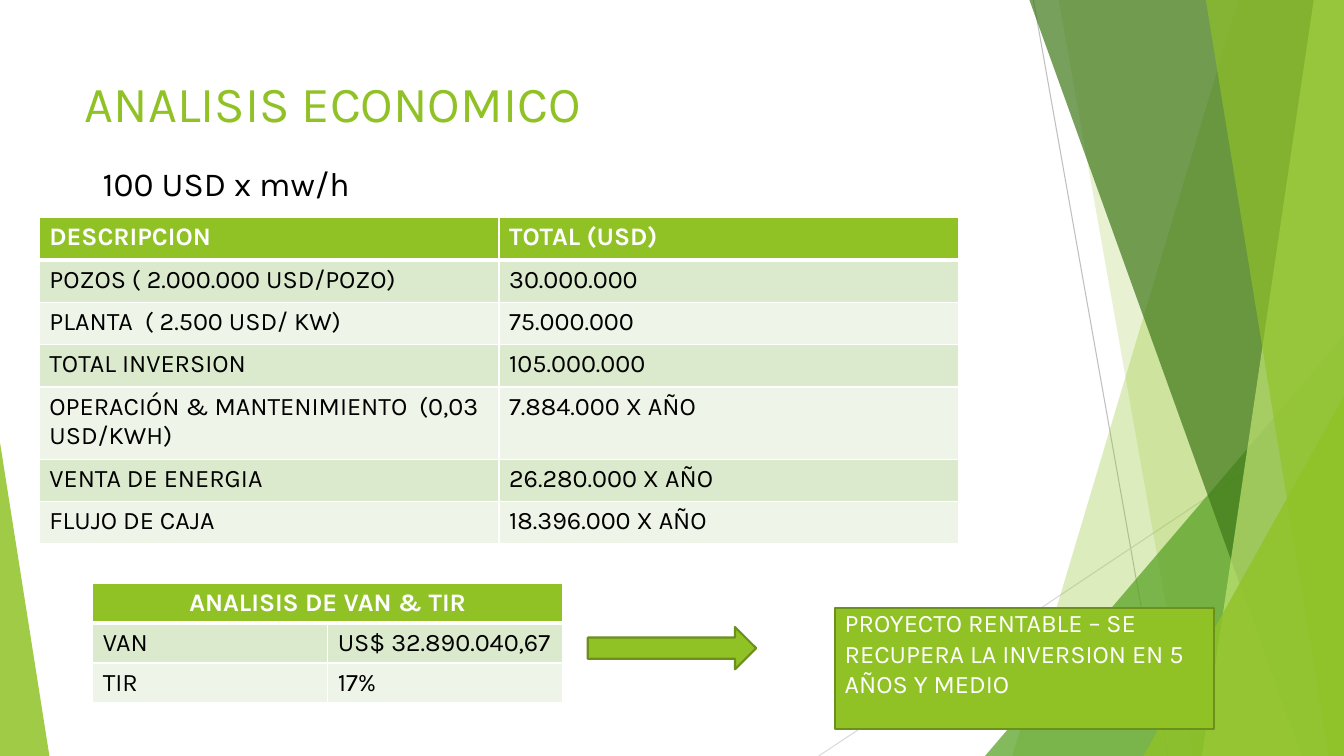
from lxml import etree
from pptx import Presentation
from pptx.dml.color import RGBColor
from pptx.enum.shapes import MSO_CONNECTOR, MSO_SHAPE
from pptx.enum.text import MSO_ANCHOR, MSO_AUTO_SIZE, PP_ALIGN
from pptx.oxml.ns import qn
from pptx.util import Inches, Pt

TRI, ARROW, RECT = MSO_SHAPE.ISOSCELES_TRIANGLE, MSO_SHAPE.RIGHT_ARROW, MSO_SHAPE.RECTANGLE
STRAIGHT = MSO_CONNECTOR.STRAIGHT
TOP, MIDDLE = MSO_ANCHOR.TOP, MSO_ANCHOR.MIDDLE
LEFT, CENTER = PP_ALIGN.LEFT, PP_ALIGN.CENTER
NO_FIT = MSO_AUTO_SIZE.NONE
W, H = 13.33, 7.5
GREEN, EDGE, WHITE, BLACK = "90C226", "6B901C", "FFFFFF", "000000"
BANDS = ["EEF4E8", "DBE9CD"]


def paint(target, color, alpha=100):
    """Fill a shape, line or cell, or color a font."""
    if hasattr(target, "fill"):
        target = target.fill
    if hasattr(target, "solid"):
        target.solid()
        target = target.fore_color
    else:
        target = target.color
    target.rgb = RGBColor.from_string(color)
    if alpha < 100:
        for node in shape.element.spPr.iter(qn("a:srgbClr")):
            etree.SubElement(node, qn("a:alpha"), val=str(alpha * 1000))


def write(frame, text, size, color, bold=False, align=LEFT):
    frame.word_wrap = True
    para = frame.paragraphs[0]
    para.alignment = align
    run = para.add_run()
    run.text = text
    run.font.name, run.font.size, run.font.bold = "Karla", Pt(size), bold
    paint(run.font, color)
    return para


deck = Presentation()
deck.slide_width, deck.slide_height = Inches(W), Inches(H)
slide = deck.slides.add_slide(deck.slide_layouts[5])
shapes = slide.shapes

# Thin background lines
for x1, y1, x2, y2, color in [(10.25, 0, 11.58, H, "BFBFBF"), (W, 4.03, 8.12, H, "D9D9D9")]:
    line = shapes.add_connector(STRAIGHT, Inches(x1), Inches(y1), Inches(x2), Inches(y2))
    paint(line.line, color)
    line.line.width = Pt(0.75)
    etree.SubElement(line.element.spPr, qn("a:effectLst"))

# Green facets: bands (top x, bottom x) reach the right edge;
# triangles (left, top, width, apex) stand on the bottom edge
facets = [
    ((12.28, 10.04), GREEN, 30),
    ((10.5, 11.83), GREEN, 20),
    ((9.77, 3.33, 3.56, 1), "54A021", 72),
    ((10.21, 12.91), "3F7819", 70),
    ((13.03, 11.92), "C0E474", 70),
    ((11.96, 13.18), GREEN, 65),
    ((11.34, 3.93, 1.99, 1), GREEN, 80),
    ((0, 4.39, 0.49, 0), GREEN, 85),
]
for geo, color, alpha in facets:
    if len(geo) == 2:
        top, base = geo
        path = shapes.build_freeform(Inches(top), 0)
        path.add_line_segments([(Inches(x), Inches(y)) for x, y in [(W, 0), (W, H), (base, H)]])
        shape = path.convert_to_shape()
    else:
        x, y, wide, apex = geo
        shape = shapes.add_shape(TRI, Inches(x), Inches(y), Inches(wide), Inches(H - y))
        shape.adjustments[0] = apex
    shape.shadow.inherit = False
    shape.line.fill.background()
    paint(shape, color, alpha)

# Title, in front of the facets
title = shapes.title
title.element.getparent().append(title.element)
title.left, title.top, title.width, title.height = Inches(0.74), Inches(0.67), Inches(9.4), Inches(1.44)
title.text_frame.vertical_anchor = TOP
title.text_frame.auto_size = NO_FIT
write(title.text_frame, "ANALISIS ECONOMICO", 36, GREEN)

# Tables: left, top, column width, row heights, rows
costs = [
    ("DESCRIPCION", "TOTAL (USD)"),
    ("POZOS ( 2.000.000 USD/POZO)", "30.000.000"),
    ("PLANTA  ( 2.500 USD/ KW)", "75.000.000"),
    ("TOTAL INVERSION", "105.000.000"),
    ("OPERACIÓN & MANTENIMIENTO  (0,03 USD/KWH)", "7.884.000 X AÑO"),
    ("VENTA DE ENERGIA", "26.280.000 X AÑO"),
    ("FLUJO DE CAJA", "18.396.000 X AÑO"),
]
returns = [("ANALISIS DE VAN & TIR", ""), ("VAN", "US$ 32.890.040,67"), ("TIR", "17%")]
tables = [
    (0.39, 2.16, 4.56, [0.42] * 4 + [0.72] + [0.42] * 2, costs),
    (0.92, 5.79, 2.33, [0.39] * 3, returns),
]
for left, top, wide, highs, rows in tables:
    table = shapes.add_table(len(rows), 2, Inches(left), Inches(top),
                             Inches(2 * wide), Inches(sum(highs))).table
    table.first_row = table.horz_banding = False
    for col in table.columns:
        col.width = Inches(wide)
    for r, (row, high) in enumerate(zip(rows, highs)):
        table.rows[r].height = Inches(high)
        head = r == 0
        for c, text in enumerate(row):
            cell = table.cell(r, c)
            paint(cell, GREEN if head else BANDS[r % 2])
            if text:
                align = CENTER if head and not row[1] else LEFT
                write(cell.text_frame, text, 18, WHITE if head else BLACK, head, align)
            # White borders, thick under the header
            props = cell._tc.get_or_add_tcPr()
            for i, side in enumerate("LRTB"):
                thick = (r, side) in [(0, "B"), (1, "T")]
                edge = etree.Element(qn("a:ln" + side), w=str(Pt(3 if thick else 1)))
                fill = etree.SubElement(edge, qn("a:solidFill"))
                etree.SubElement(fill, qn("a:srgbClr"), val=WHITE)
                props.insert(i, edge)
        if not row[1]:
            table.cell(r, 0).merge(table.cell(r, 1))

# Energy price
price = shapes.add_textbox(Inches(0.92), Inches(1.12), Inches(11.5), Inches(1.45))
price.text_frame.vertical_anchor = MIDDLE
write(price.text_frame, "100 USD x mw/h", 24, BLACK).line_spacing = 0.9

# Arrow and conclusion
for kind, x, y, wide, high, text in [
    (ARROW, 5.83, 6.22, 1.67, 0.42, ""),
    (RECT, 8.28, 6.03, 3.76, 1.2, "PROYECTO RENTABLE – SE RECUPERA LA INVERSION EN 5 AÑOS Y MEDIO"),
]:
    box = shapes.add_shape(kind, Inches(x), Inches(y), Inches(wide), Inches(high))
    box.shadow.inherit = False
    paint(box, GREEN)
    paint(box.line, EDGE)
    box.line.width = Pt(1.5)
    if text:
        box.text_frame.vertical_anchor = TOP
        box.text_frame.margin_top = 0
        write(box.text_frame, text, 18, WHITE)

deck.save("out.pptx")
